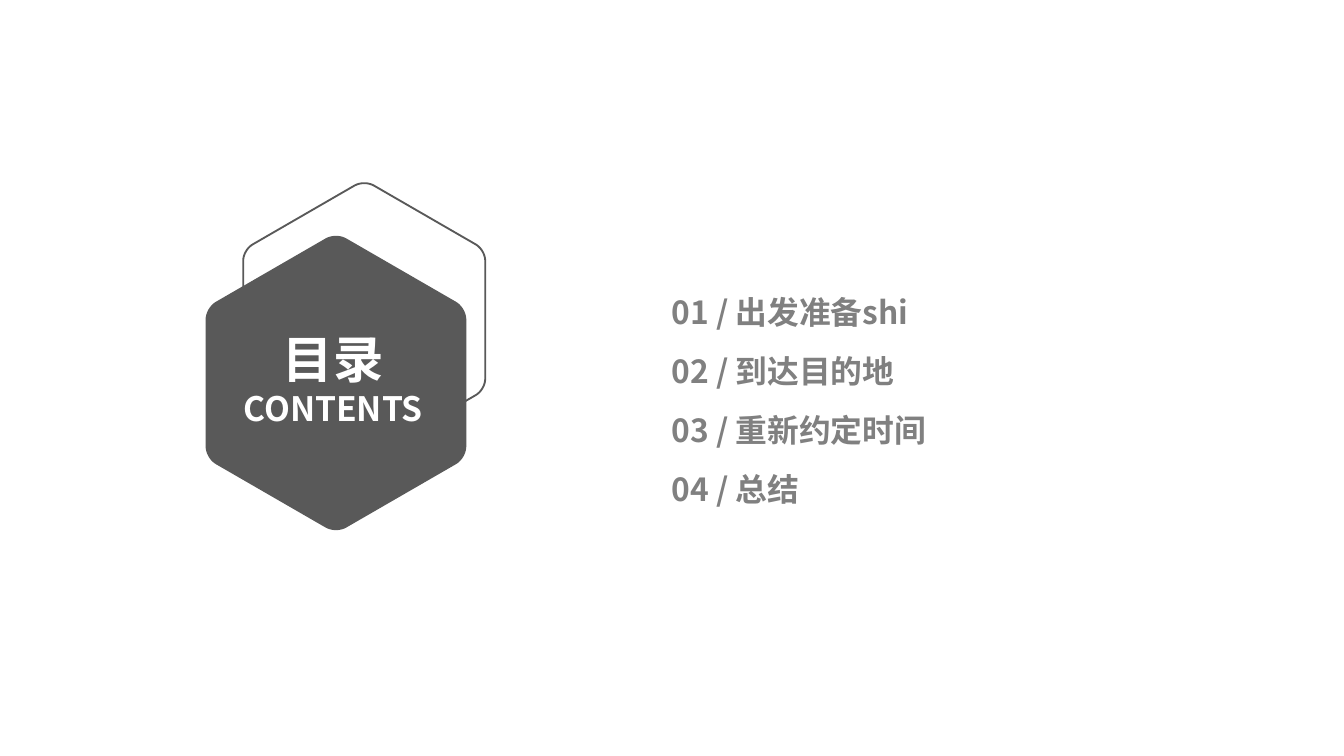
from math import cos, radians, sin

from lxml.etree import SubElement
from pptx import Presentation
from pptx.dml.color import RGBColor
from pptx.enum.text import MSO_ANCHOR, MSO_AUTO_SIZE as AUTO, PP_ALIGN
from pptx.oxml.ns import qn
from pptx.util import Inches, Pt

FONT = "Noto Sans CJK SC"
COLORS = {"dark": "595959", "gray": "808080", "white": "FFFFFF"}
ITEMS = ["出发准备shi", "到达目的地", "重新约定时间", "总结"]


def rgb(name):
    """Return the named colour."""
    return RGBColor.from_string(COLORS[name])


def toward(a, b, share):
    """Return the point that lies a share of the way from a to b."""
    return tuple(u + (v - u) * share for u, v in zip(a, b))


def rounded_corner(before, corner, after, share, steps=10):
    """Return points on a cubic curve that rounds one corner."""
    start, end = toward(corner, before, share), toward(corner, after, share)
    c1, c2 = toward(start, corner, 0.58), toward(end, corner, 0.58)
    points = []
    for i in range(steps + 1):
        t = i / steps
        weights = ((1 - t) ** 3, 3 * t * (1 - t) ** 2, 3 * t * t * (1 - t), t ** 3)
        points.append(tuple(sum(w * q[axis] for w, q in zip(weights, (start, c1, c2, end)))
                            for axis in (0, 1)))
    return points


def add_hexagon(s, cx, cy, radius, fill=None, line=None):
    """Add a pointed-top regular hexagon with rounded corners."""
    angles = [radians(60 * i - 90) for i in range(6)]
    corners = [(cx + radius * cos(a), cy + radius * sin(a)) for a in angles]
    outline = []
    for i, corner in enumerate(corners):
        outline += rounded_corner(corners[i - 1], corner, corners[(i + 1) % 6], 0.08)
    points = [(Inches(x), Inches(y)) for x, y in outline]
    builder = s.shapes.build_freeform(*points[0])
    builder.add_line_segments(points[1:])
    sp = builder.convert_to_shape()
    sp.shadow.inherit = False
    if fill:
        sp.fill.solid()
        sp.fill.fore_color.rgb = rgb(fill)
    else:
        sp.fill.background()
    if line:
        sp.line.color.rgb = rgb(line)
        sp.line.width = Pt(1)
    else:
        sp.line.fill.background()


def place(sp, left, top, width, height):
    """Set position and size in inches."""
    sp.left, sp.top, sp.width, sp.height = map(Inches, (left, top, width, height))


def write(sp, lines, color, align):
    """Write (text, size) lines as bold paragraphs."""
    tf = sp.text_frame
    tf.word_wrap = True
    tf.auto_size = AUTO.SHAPE_TO_FIT_TEXT
    tf.vertical_anchor = MSO_ANCHOR.TOP
    tf.margin_left = tf.margin_right = Pt(5.4)
    tf.margin_top = tf.margin_bottom = Pt(2.7)
    for i, (text, size) in enumerate(lines):
        p = tf.add_paragraph() if i else tf.paragraphs[0]
        p.alignment = align
        r = p.add_run()
        r.text = text
        r.font.size, r.font.bold, r.font.name = Pt(size), True, FONT
        r.font.color.rgb = rgb(color)
        SubElement(r._r.get_or_add_rPr(), qn("a:ea")).set("typeface", FONT)


def add_title(s):
    """Place the title placeholder in front of the hexagons."""
    sp = s.shapes.title
    s.shapes._spTree.append(sp._element)
    place(sp, 1.57, 2.4, 1.82, 0.83)
    write(sp, [("目录", 27), ("CONTENTS", 18)], "white", PP_ALIGN.CENTER)


def add_item(s, number, text):
    """Add one numbered line of the contents list."""
    sp = s.shapes.add_textbox(0, 0, 0, 0)
    place(sp, 4.92, 2.14 + 0.44 * (number - 1), 3.26, 0.36)
    write(sp, [(f"{number:02d} / {text}", 17)], "gray", PP_ALIGN.LEFT)


def main():
    """Build the contents slide."""
    prs = Presentation()
    prs.slide_width = Inches(10)
    prs.slide_height = prs.slide_width * 9 // 16
    s = prs.slides.add_slide(prs.slide_layouts[5])
    add_hexagon(s, 2.71, 2.38, 1.04, line="dark")
    for number, text in enumerate(ITEMS, 1):
        add_item(s, number, text)
    add_hexagon(s, 2.5, 2.85, 1.12, fill="dark")
    add_title(s)
    prs.save("out.pptx")


if __name__ == "__main__":
    main()
